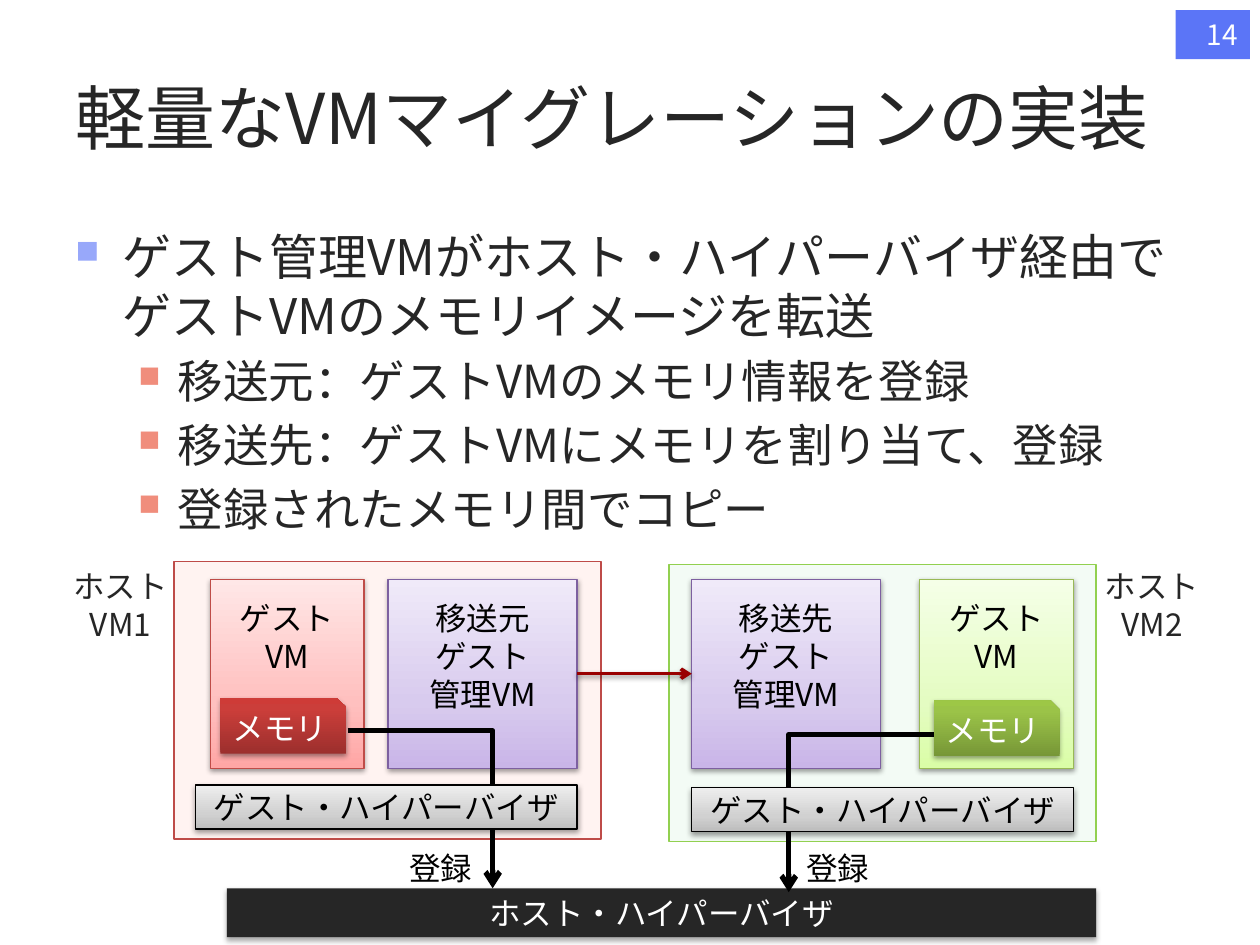
from copy import deepcopy
from dataclasses import dataclass

from lxml.etree import SubElement
from pptx import Presentation
from pptx.dml.color import RGBColor
from pptx.enum.shapes import MSO_CONNECTOR, MSO_SHAPE
from pptx.enum.text import MSO_ANCHOR, MSO_AUTO_SIZE, PP_ALIGN
from pptx.oxml.ns import qn
from pptx.util import Pt


@dataclass(frozen=True)
class Theme:
    font: str = "Noto Sans CJK JP"
    title_size: float = 40
    body_sizes: tuple = (28, 26)
    label_size: float = 18
    number_size: float = 16
    ink: str = "262626"
    black: str = "000000"
    white: str = "FFFFFF"
    accent: str = "5B75F7"
    transfer: str = "990000"
    bullets: tuple = ("98A8FA", "F08D7C")
    admin: tuple = ("C9B5E8", "D8CBEE", "F0EAF9")
    admin_line: str = "7D60A0"
    hypervisor: tuple = ("BDBDBD", "D1D1D1", "EEEEEE")
    light_stops: tuple = (0, 0.35, 1)
    strong_stops: tuple = (0, 0.8, 1)


THEME = Theme()


@dataclass(frozen=True)
class Host:
    name: str
    role: str
    panel: tuple
    label_left: float
    guest_left: float
    admin_left: float
    memory: tuple
    hypervisor: tuple
    elbow: tuple
    register_left: float
    panel_fill: str
    panel_line: str
    guest_fill: tuple
    guest_line: str
    memory_fill: tuple


HOSTS = (
    Host("VM1", "移送元", (99.4, 321), 34, 120.2, 221.8, (126, 399), (111.6, 448.5),
         (198.7, 281.5, 417.6), 226.8, "FF937C", "BE4B48",
         ("FFA6A5", "FFC0BF", "FFE7E7"), "BF4C48", ("9C2F2D", "CB3E3A", "CE3B37")),
    Host("VM2", "移送先", (382.3, 322.5), 623.5, 525.6, 395.3, (533.5, 400.2), (395.3, 450),
         (533.5, 450.7, 419.8), 453.6, "8FDEA0", "92D050",
         ("DAFDA7", "E4FCC2", "F5FFE7"), "98B955", ("779737", "9BC348", "9DC746")),
)

BULLETS = (
    (0, "ゲスト管理VMがホスト・ハイパーバイザ経由でゲストVMのメモリイメージを転送"),
    (1, "移送元：ゲストVMのメモリ情報を登録"),
    (1, "移送先：ゲストVMにメモリを割り当て、登録"),
    (1, "登録されたメモリ間でコピー"),
)


def points(values):
    return [Pt(value) for value in values]


def add_span(para, text, size, color):
    span = para.add_run()
    span.text = text
    span.font.size = Pt(size)
    span.font.color.rgb = RGBColor.from_string(color)
    span.font.name = THEME.font
    SubElement(span.font._element, qn("a:ea"), typeface=THEME.font)


def write(box, lines, color, size=THEME.label_size, align=PP_ALIGN.CENTER, anchor=MSO_ANCHOR.MIDDLE):
    frame = box.text_frame
    frame.vertical_anchor = anchor
    for index, line in enumerate(lines):
        para = frame.add_paragraph() if index else frame.paragraphs[0]
        para.alignment = align
        add_span(para, line, size, color)


def add_shadow(properties, alpha=38):
    effects = properties.find(qn("a:effectLst"))
    if effects is None:
        effects = SubElement(properties, qn("a:effectLst"))
    shadow = SubElement(effects, qn("a:outerShdw"), blurRad=str(Pt(3.1)), dist=str(Pt(1.6)),
                        dir="5400000", rotWithShape="0")
    color = SubElement(shadow, qn("a:srgbClr"), val=THEME.black)
    SubElement(color, qn("a:alpha"), val=str(alpha * 1000))


def add_box(page, bounds, fill, line=None, kind=MSO_SHAPE.RECTANGLE):
    box = page.shapes.add_shape(kind, *points(bounds))
    box.shadow.inherit = False
    box.text_frame.word_wrap = True
    if line:
        box.line.color.rgb = RGBColor.from_string(line)
        box.line.width = Pt(0.75)
    else:
        box.line.fill.background()
    if isinstance(fill, str):
        box.fill.solid()
        box.fill.fore_color.rgb = RGBColor.from_string(fill)
    return box


def add_gradient_box(page, bounds, colors, line=None, stops=THEME.light_stops, kind=MSO_SHAPE.RECTANGLE):
    box = add_box(page, bounds, colors, line, kind)
    box.fill.gradient()
    box.fill.gradient_angle = 90
    stop_list = box._element.spPr.find(".//" + qn("a:gsLst"))
    stop_list.insert(1, deepcopy(stop_list[0]))
    for stop, position, color in zip(box.fill.gradient_stops, stops, colors):
        stop.position = position
        stop.color.rgb = RGBColor.from_string(color)
    add_shadow(box._element.spPr)
    return box


def add_label(page, bounds, lines, color, align=PP_ALIGN.CENTER):
    box = page.shapes.add_textbox(*points(bounds))
    box.text_frame.word_wrap = False
    box.text_frame.auto_size = MSO_AUTO_SIZE.SHAPE_TO_FIT_TEXT
    write(box, lines, color, align=align, anchor=MSO_ANCHOR.TOP)


def style_arrow(arrow, color, width):
    arrow.line.color.rgb = RGBColor.from_string(color)
    arrow.line.width = Pt(width)
    SubElement(arrow.line._get_or_add_ln(), qn("a:tailEnd"), type="arrow")


def add_elbow(page, start, turn, top):
    builder = page.shapes.build_freeform(Pt(start), Pt(top))
    builder.add_line_segments([points((turn, top)), points((turn, top + 90))], close=False)
    elbow = builder.convert_to_shape()
    elbow.shadow.inherit = False
    elbow.fill.background()
    style_arrow(elbow, THEME.black, 3)


def add_title(page, text):
    title = page.shapes.title
    title.left, title.top, title.width, title.height = points((36, 21.6, 648, 90))
    title.text_frame.auto_size = MSO_AUTO_SIZE.NONE
    write(title, [text], THEME.ink, THEME.title_size, PP_ALIGN.LEFT)


def add_bullets(page):
    box = page.shapes.add_textbox(*points((36, 126, 648, 356.4)))
    frame = box.text_frame
    frame.word_wrap = True
    for index, (level, text) in enumerate(BULLETS):
        para = frame.add_paragraph() if index else frame.paragraphs[0]
        para.level = level
        size = THEME.body_sizes[level]
        para.space_before = Pt(size * 0.2 if index else 0)
        properties = para._p.get_or_add_pPr()
        left, hanging = ((27, 27), (58.5, 22.5))[level]
        properties.set("marL", str(Pt(left)))
        properties.set("indent", str(-Pt(hanging)))
        color = SubElement(properties, qn("a:buClr"))
        SubElement(color, qn("a:srgbClr"), val=THEME.bullets[level])
        SubElement(properties, qn("a:buSzPct"), val="66000")
        SubElement(properties, qn("a:buChar"), char="■")
        add_span(para, text, size, THEME.ink)


def add_machine(page, left, width, lines, colors, line):
    box = add_gradient_box(page, (left, 331, width, 108), colors, line)
    box.text_frame.margin_top = Pt(11.5)
    write(box, lines, THEME.black, anchor=MSO_ANCHOR.TOP)
    return box


def add_host(page, host):
    panel = add_box(page, (*host.panel, 244, 158.5), host.panel_fill, host.panel_line)
    color = panel._element.spPr.find(qn("a:solidFill"))[0]
    SubElement(color, qn("a:alpha"), val="10000")
    add_label(page, (host.label_left, 320.4, 69.8, 51), ["ホスト", host.name], THEME.ink)
    admin = add_machine(page, host.admin_left, 108, [host.role, "ゲスト", "管理VM"],
                        THEME.admin, THEME.admin_line)
    add_machine(page, host.guest_left, 87.8, ["ゲストVM"], host.guest_fill, host.guest_line)
    memory = add_gradient_box(page, (*host.memory, 72, 31.7), host.memory_fill,
                              stops=THEME.strong_stops, kind=MSO_SHAPE.SNIP_1_RECTANGLE)
    memory.text_frame.word_wrap = False
    write(memory, ["メモリ"], THEME.white, align=PP_ALIGN.LEFT, anchor=MSO_ANCHOR.TOP)
    return admin


def add_registration(page, host):
    add_elbow(page, *host.elbow)
    hypervisor = add_gradient_box(page, (*host.hypervisor, 218.2, 25.2), THEME.hypervisor, THEME.black)
    write(hypervisor, ["ゲスト・ハイパーバイザ"], THEME.black)
    add_label(page, (host.register_left, 481.7, 51.8, 28.8), ["登録"], THEME.black, PP_ALIGN.LEFT)


def add_transfer(page, source, target):
    arrow = page.shapes.add_connector(MSO_CONNECTOR.STRAIGHT, 0, 0, 0, 0)
    arrow.begin_connect(source, 3)
    arrow.end_connect(target, 1)
    style_arrow(arrow, THEME.transfer, 2)
    add_shadow(arrow._element.spPr)


def main():
    deck = Presentation()
    deck.slide_width, deck.slide_height = points((720, 540))
    page = deck.slides.add_slide(deck.slide_layouts[5])
    add_title(page, "軽量なVMマイグレーションの実装")
    add_bullets(page)
    number = add_box(page, (671.8, 5.8, 42.5, 28), THEME.accent)
    write(number, ["14"], THEME.white, THEME.number_size, PP_ALIGN.RIGHT)
    source, target = [add_host(page, host) for host in HOSTS]
    base = add_box(page, (129.6, 507.6, 496.8, 28), THEME.ink)
    add_shadow(base._element.spPr, 35)
    write(base, ["ホスト・ハイパーバイザ"], THEME.white)
    for host in HOSTS:
        add_registration(page, host)
    add_transfer(page, source, target)
    deck.save("out.pptx")


if __name__ == "__main__":
    main()
